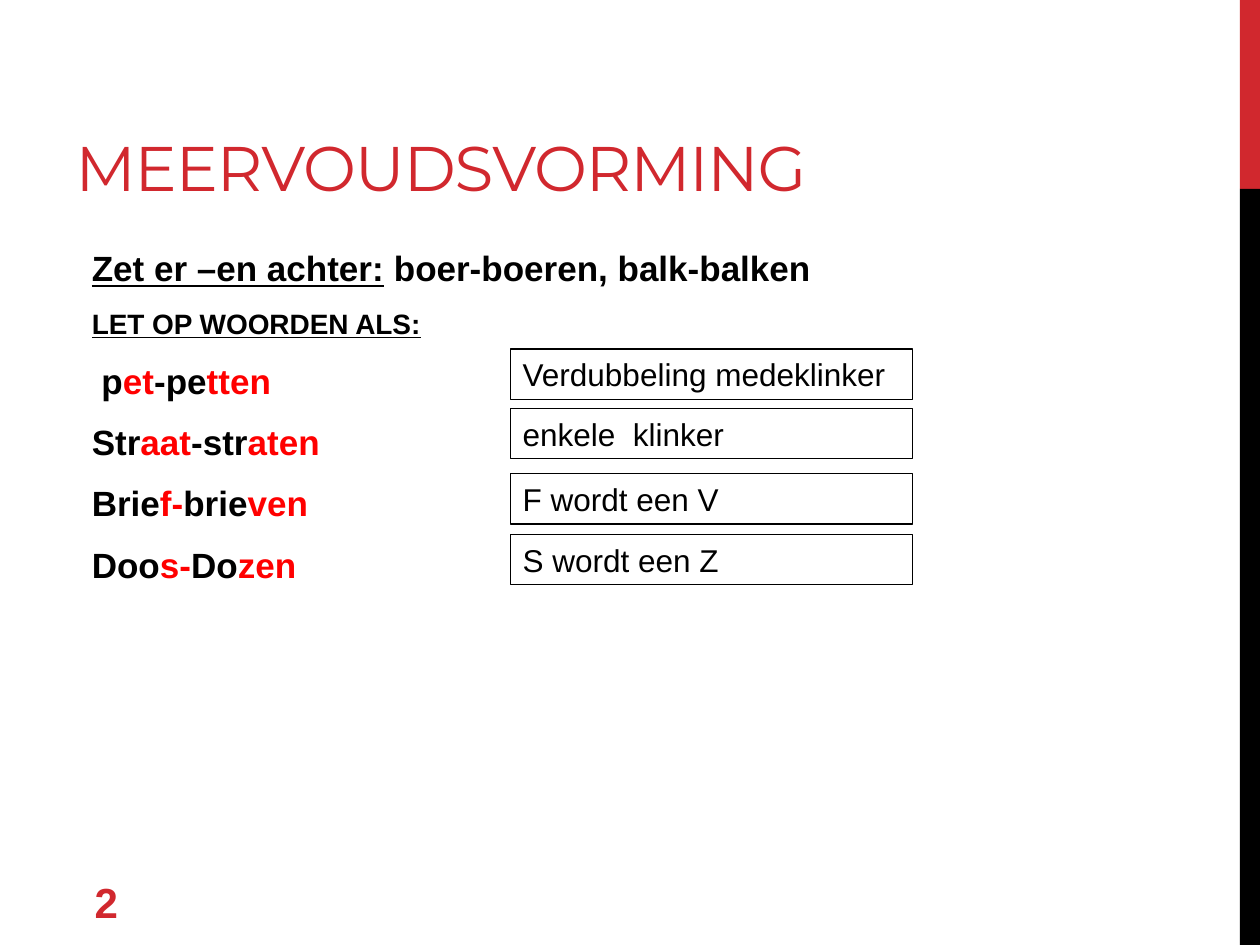
from pptx import Presentation
from pptx.dml.color import RGBColor
from pptx.enum.shapes import MSO_SHAPE
from pptx.enum.text import MSO_ANCHOR, MSO_AUTO_SIZE, PP_ALIGN
from pptx.util import Inches, Pt

RECT = MSO_SHAPE.RECTANGLE
LEFT = PP_ALIGN.LEFT
MIDDLE, BOTTOM = MSO_ANCHOR.MIDDLE, MSO_ANCHOR.BOTTOM
NO_FIT = MSO_AUTO_SIZE.NONE

CRIMSON = RGBColor(0xD1, 0x28, 0x2E)
RED = RGBColor(0xFF, 0x00, 0x00)
BLACK = RGBColor(0x00, 0x00, 0x00)

WIDTH, HEIGHT = 10, 7.5
BAR_LEFT = 9.84
BAR_SPLIT = HEIGHT / 5
RULE_LEFT, RULE_WIDTH, RULE_HEIGHT = 4.05, 3.19, 0.4

EXAMPLES = [
    (" p", "et", "-pe", "tten"),
    ("Str", "aat", "-str", "aten"),
    ("Brie", "f-", "brie", "ven"),
    ("Doo", "s-", "Do", "zen"),
]
RULES = [
    (2.77, "Verdubbeling medeklinker"),
    (3.24, "enkele  klinker"),
    (3.76, "F wordt een V"),
    (4.24, "S wordt een Z"),
]


def box(*lengths):
    return [Inches(n) for n in lengths]


def style(p, size, color, name="Arial", bold=False):
    p.alignment = LEFT
    f = p.font
    f.size, f.name, f.bold = Pt(size), name, bold
    f.color.rgb = color


def add_rect(slide, *lengths):
    sp = slide.shapes.add_shape(RECT, *box(*lengths))
    sp.shadow.inherit = False
    return sp


def add_bar(slide, top, height, color):
    sp = add_rect(slide, BAR_LEFT, top, WIDTH - BAR_LEFT, height)
    sp.fill.solid()
    sp.fill.fore_color.rgb = color
    sp.line.fill.background()


def set_title(slide, text):
    sp = slide.shapes.title
    sp.left, sp.top, sp.width, sp.height = box(0.5, 0.17, 6.33, 1.5)
    tf = sp.text_frame
    tf.text = text
    tf.vertical_anchor = BOTTOM
    tf.auto_size = NO_FIT
    p = tf.paragraphs[0]
    style(p, 36, CRIMSON, "Montserrat")
    p.runs[0].font._element.set("spc", "-60")


def add_line(p, size, parts):
    style(p, size, BLACK, bold=True)
    p.space_before, p.space_after = Pt(size / 4), Pt(6)
    for text, color, underline in parts:
        r = p.add_run()
        r.text = text
        r.font.color.rgb = color
        r.font.underline = underline


def add_body(slide):
    tf = slide.shapes.add_textbox(*box(0.63, 1.91, 8.62, 4.81)).text_frame
    tf.word_wrap = True
    add_line(tf.paragraphs[0], 20, [
        ("Zet er –en achter:", BLACK, True),
        (" boer-boeren, balk-balken", BLACK, False),
    ])
    add_line(tf.add_paragraph(), 16, [("LET OP WOORDEN ALS:", BLACK, True)])
    for words in EXAMPLES:
        parts = [(w, RED if i % 2 else BLACK, False) for i, w in enumerate(words)]
        add_line(tf.add_paragraph(), 20, parts)


def add_rule(slide, top, text):
    sp = add_rect(slide, RULE_LEFT, top, RULE_WIDTH, RULE_HEIGHT)
    sp.fill.background()
    sp.line.color.rgb = BLACK
    sp.line.width = Pt(0.75)
    tf = sp.text_frame
    tf.text = text
    tf.word_wrap = True
    style(tf.paragraphs[0], 18, BLACK)


def add_page_number(slide, number):
    tf = slide.shapes.add_textbox(*box(0.75, 7.06, 0.31, 0.2)).text_frame
    tf.text = str(number)
    tf.margin_left = tf.margin_right = 0
    tf.vertical_anchor = MIDDLE
    tf.word_wrap = True
    style(tf.paragraphs[0], 24, CRIMSON, bold=True)


def main():
    prs = Presentation()
    prs.slide_width, prs.slide_height = box(WIDTH, HEIGHT)
    slide = prs.slides.add_slide(prs.slide_layouts[5])
    add_bar(slide, 0, BAR_SPLIT, CRIMSON)
    add_bar(slide, BAR_SPLIT, HEIGHT - BAR_SPLIT, BLACK)
    set_title(slide, "MEERVOUDSVORMING")
    add_body(slide)
    for top, text in RULES:
        add_rule(slide, top, text)
    add_page_number(slide, 2)
    prs.save("out.pptx")


if __name__ == "__main__":
    main()
